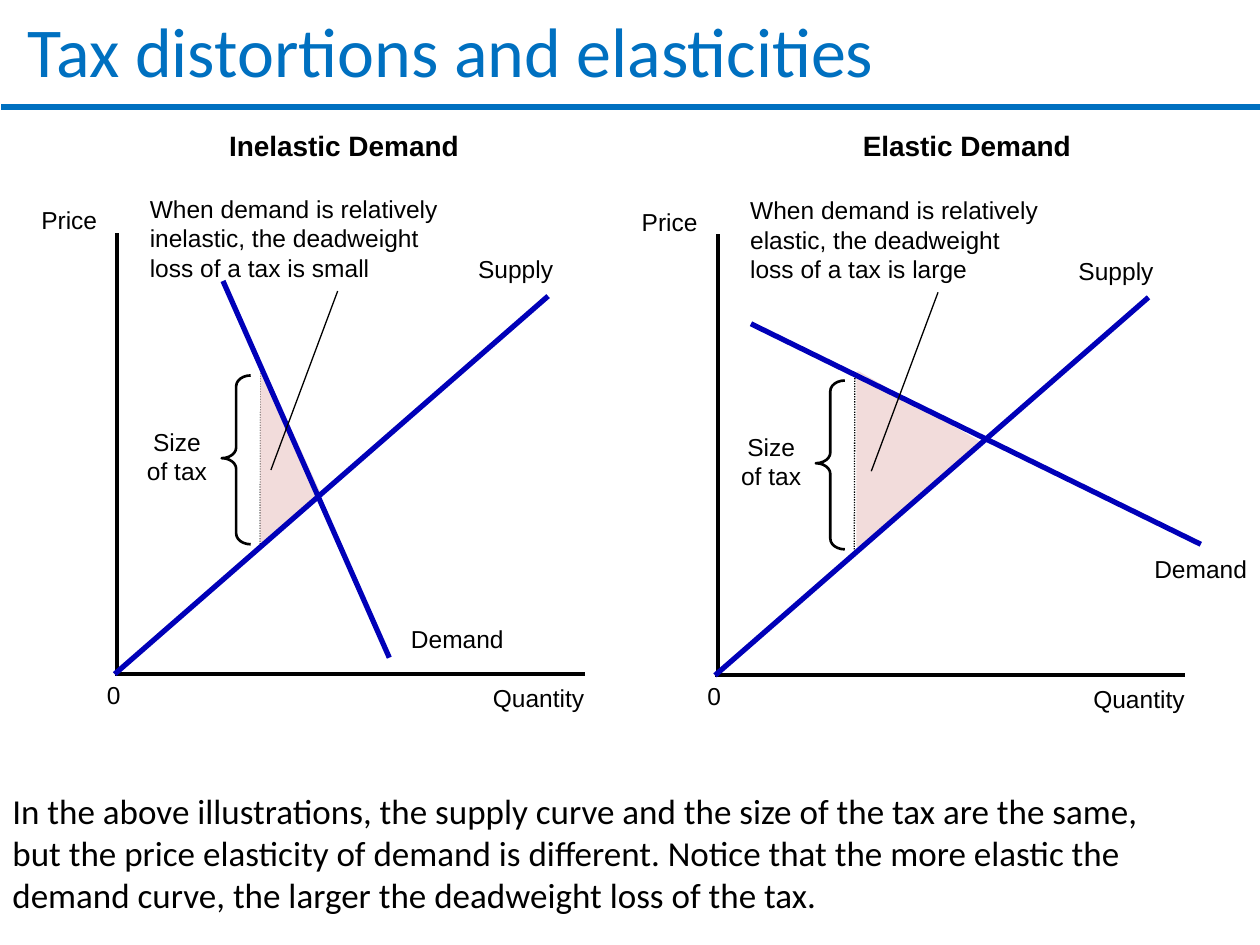
from lxml import etree
from pptx import Presentation
from pptx.dml.color import RGBColor
from pptx.enum.dml import MSO_LINE
from pptx.enum.shapes import MSO_CONNECTOR, MSO_SHAPE
from pptx.enum.text import MSO_ANCHOR, MSO_AUTO_SIZE, PP_ALIGN
from pptx.oxml.ns import qn
from pptx.util import Inches, Pt

LEFT, MID, RIGHT = PP_ALIGN.LEFT, PP_ALIGN.CENTER, PP_ALIGN.RIGHT
BRACE, WEDGE = MSO_SHAPE.LEFT_BRACE, MSO_SHAPE.ISOSCELES_TRIANGLE
DOTS = MSO_LINE.ROUND_DOT
COLOR = {"head": "0070C0", "ink": "000000", "curve": "0000B8", "loss": "F2DCDB"}
COLS, ROWS = 100, 75


def paint(name):
    return RGBColor.from_string(COLOR[name])


def write(frame, text, size=14, font="Arial", color="ink", bold=False, align=LEFT):
    """Fill a text frame, one paragraph for each line of text."""
    frame.text = text
    for para in frame.paragraphs:
        para.alignment = align
        for run in para.runs:
            run.font.size, run.font.name, run.font.bold = Pt(size), font, bold
            run.font.color.rgb = paint(color)


class Board:
    """Slide on a grid of 100 by 75 cells, with a movable origin."""

    def __init__(self):
        self.deck = Presentation()
        self.deck.slide_width, self.deck.slide_height = Inches(10), Inches(7.5)
        self.slide = self.deck.slides.add_slide(self.deck.slide_layouts[5])
        self.shapes = self.slide.shapes
        self.move(0, 0)

    def move(self, col, row):
        self.col, self.row = col, row

    def point(self, col, row):
        return (int((self.col + col) * self.deck.slide_width / COLS),
                int((self.row + row) * self.deck.slide_height / ROWS))

    def box(self, col, row, wide, high):
        return (*self.point(col, row), int(wide * self.deck.slide_width / COLS),
                int(high * self.deck.slide_height / ROWS))

    def title(self, text, area):
        shape = self.shapes.title
        shape.left, shape.top, shape.width, shape.height = self.box(*area)
        frame = shape.text_frame
        frame.auto_size = MSO_AUTO_SIZE.NONE
        frame.vertical_anchor = MSO_ANCHOR.TOP
        write(frame, text, size=40, font="Calibri", color="head")

    def text(self, text, area, wrap=False, **style):
        frame = self.shapes.add_textbox(*self.box(*area)).text_frame
        frame.word_wrap = wrap
        frame.auto_size = MSO_AUTO_SIZE.SHAPE_TO_FIT_TEXT
        write(frame, text, **style)

    def line(self, start, end, width=0.75, color="ink", dash=None):
        link = self.shapes.add_connector(
            MSO_CONNECTOR.STRAIGHT, *self.point(*start), *self.point(*end))
        link.line.width, link.line.color.rgb = Pt(width), paint(color)
        if dash:
            link.line.dash_style = dash
        etree.SubElement(link._element.spPr, qn("a:effectLst"))

    def shape(self, kind, area, adjust, width, color, fill=None, turn=0):
        shape = self.shapes.add_shape(kind, *self.box(*area))
        shape.shadow.inherit = False
        shape.rotation = turn
        for i, value in enumerate(adjust):
            shape.adjustments[i] = value
        shape.line.width, shape.line.color.rgb = Pt(width), paint(color)
        if fill:
            shape.fill.solid()
            shape.fill.fore_color.rgb = paint(fill)
        else:
            shape.fill.background()


def graph(board, origin, tax, head, note, loss, tip, demand, label):
    """Draw one market; tax is the offset of the tax bracket and its label."""
    col, row = origin
    board.move(col, row)
    board.line((9.3, 18.5), (9.3, 53.5), width=2.25)
    board.text("Price", (2.2, 15.8, 6.5, 3.4), align=RIGHT)
    board.line((9.1, 53.5), (46.4, 53.5), width=2.25)
    board.text("Quantity", (38.1, 53.7, 9.3, 3.4), align=MID)
    board.text("0", (7.5, 53.5, 3.1, 3.4))
    board.text(head[0], head[1], size=16, bold=True)

    board.move(col + tax[0], row + tax[1])
    board.text("Size\nof tax", (10.6, 33.4, 6.9, 5.7), wrap=True, align=MID)
    board.shape(BRACE, (17.6, 29.8, 2.3, 13.4), (0.37, 0.49), 1.5, "ink")
    board.line((20.7, 29.6), (20.65, 43.2), dash=DOTS)

    board.move(col, row)
    board.shape(WEDGE, loss, (tip,), 2, "loss", fill="loss", turn=90)
    board.line(*demand, width=3, color="curve")
    board.text("Demand", (*label, 9.4, 3.4), align=MID)
    board.line((9.1, 53.5), (43.5, 23.5), width=3, color="curve")
    board.text("Supply ", (36.9, 19.7, 8.6, 3.4), align=MID)
    board.text(note, (10.9, 14.9, 25.5, 8.1), wrap=True)
    board.line((21.5, 37.3), (26.8, 23.1))
    board.move(0, 0)


def main():
    board = Board()
    board.line((0.1, 8.5), (100, 8.5), width=3, color="head")
    board.title("Tax distortions and elasticities", (1.2, 0.1, 98.8, 5.8))
    graph(board, (0, 0), (0, 0),
          head=("Inelastic Demand", (17.2, 9.7, 20.5, 3.7)),
          note="When demand is relatively inelastic, the deadweight loss of a tax is small",
          loss=(16.2, 33.9, 13.7, 4.5), tip=0.72,
          demand=((17.7, 22.3), (30.9, 52.2)), label=(31.6, 49))
    graph(board, (47.65, 0.1), (-0.5, 0.3),
          head=("Elastic Demand", (19.85, 9.6, 18.7, 3.7)),
          note="When demand is relatively elastic, the deadweight loss of a tax is large",
          loss=(18.45, 31.5, 13.7, 9.7), tip=0.41,
          demand=((11.95, 25.6), (47.65, 43.1)), label=(42.95, 43.4))
    board.text("In the above illustrations, the supply curve and the size of the tax "
               "are the same, but the price elasticity of demand is different. Notice "
               "that the more elastic the demand curve, the larger the deadweight loss "
               "of the tax.", (0, 62.2, 94.8, 11.1), wrap=True, size=20, font="Calibri")
    board.deck.save("out.pptx")


if __name__ == "__main__":
    main()
